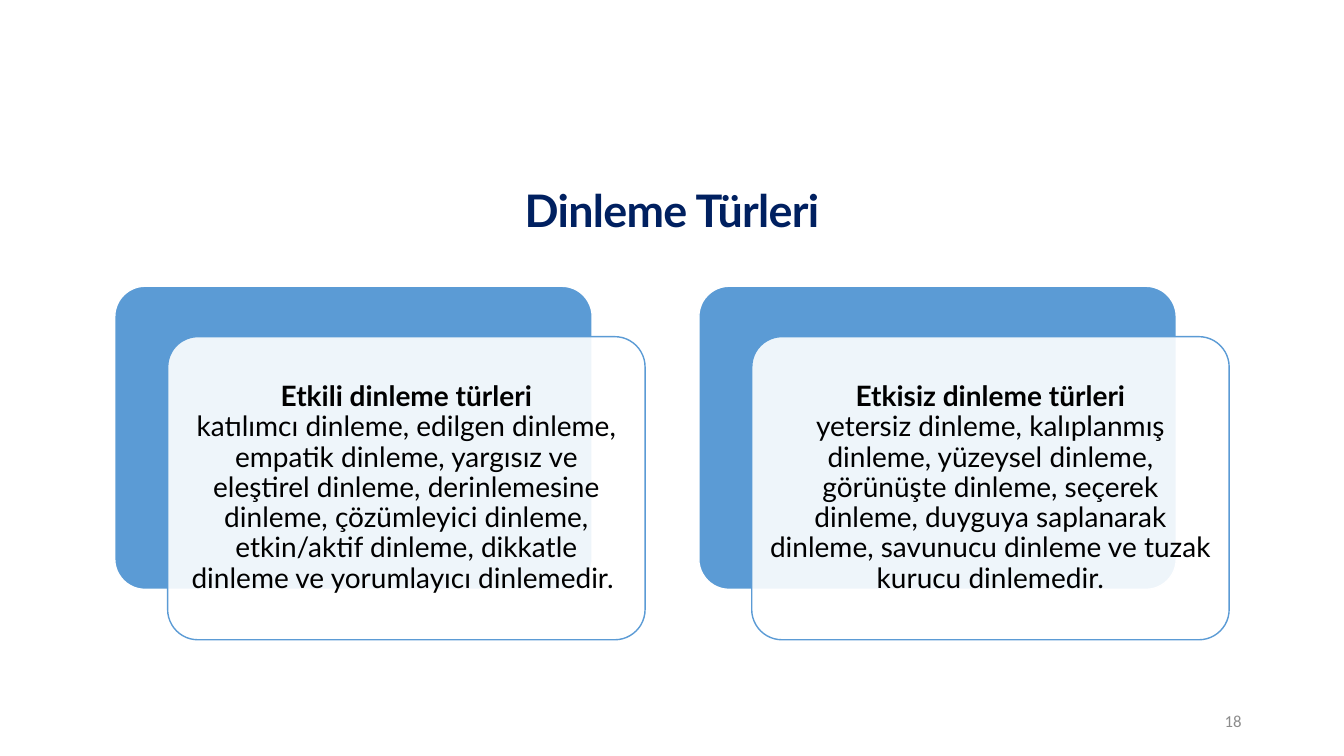
import pptx
import pptx.dml.color
import pptx.enum.shapes
import pptx.enum.text
import pptx.oxml.ns
import pptx.util
from lxml import etree

Pt = pptx.util.Pt
ALIGN = pptx.enum.text.PP_ALIGN
COLORS = {"navy": "002060", "blue": "5B9BD5", "white": "FFFFFF",
          "black": "000000", "gray": "8C8C8C"}
CARDS = [
    ("Etkili dinleme türleri",
     "katılımcı dinleme, edilgen dinleme, empatik dinleme, yargısız ve "
     "eleştirel dinleme, derinlemesine dinleme, çözümleyici dinleme, "
     "etkin/aktif dinleme, dikkatle dinleme ve yorumlayıcı dinlemedir. "),
    ("Etkisiz dinleme türleri",
     "yetersiz dinleme, kalıplanmış dinleme, yüzeysel dinleme, görünüşte "
     "dinleme, seçerek dinleme, duyguya saplanarak dinleme, savunucu dinleme "
     "ve tuzak kurucu dinlemedir."),
]


def rgb(name):
    """Return the named colour."""
    return pptx.dml.color.RGBColor.from_string(COLORS[name])


def add_paragraph_box(s, box, size, color, align=ALIGN.CENTER, font="Lato", inset=None):
    """Add a middle-anchored text box and return its styled paragraph."""
    tf = s.shapes.add_textbox(*map(Pt, box)).text_frame
    tf.word_wrap = True
    tf.vertical_anchor = pptx.enum.text.MSO_ANCHOR.MIDDLE
    if inset is not None:
        tf.margin_left = tf.margin_right = tf.margin_top = tf.margin_bottom = Pt(inset)
    p = tf.paragraphs[0]
    p.alignment = align
    p.font.size = Pt(size)
    p.font.name = font
    p.font.color.rgb = rgb(color)
    return p


def add_panel(s, box, fill, line, opacity=100):
    """Add a rounded panel with the given fill opacity in percent."""
    sp = s.shapes.add_shape(pptx.enum.shapes.MSO_SHAPE.ROUNDED_RECTANGLE, *map(Pt, box))
    sp.shadow.inherit = False
    sp.adjustments[0] = 0.1
    sp.fill.solid()
    sp.fill.fore_color.rgb = rgb(fill)
    sp.line.color.rgb = rgb(line)
    sp.line.width = Pt(1)
    if opacity < 100:
        qn = pptx.oxml.ns.qn
        color = sp._element.spPr.find(qn("a:solidFill")).find(qn("a:srgbClr"))
        etree.SubElement(color, qn("a:alpha")).set("val", str(opacity * 1000))


def add_title(s, box, text):
    """Add the slide title."""
    p = add_paragraph_box(s, box, 32, "navy")
    p.line_spacing = 0.9
    p.font.bold = True
    r = p.add_run()
    r.text = text
    r._r.get_or_add_rPr().set("spc", "-50")


def add_card(s, box, heading, body):
    """Add a blue panel with a translucent text panel offset over it."""
    x, y, w, h = box
    dx, dy, pad = 37.8, 36, 6.3
    add_panel(s, box, "blue", "white")
    add_panel(s, (x + dx, y + dy, w, h), "white", "blue", 90)
    text_box = (x + dx + pad, y + dy + pad, w - 2 * pad, h - 2 * pad)
    p = add_paragraph_box(s, text_box, 20, "black", inset=6)
    p.line_spacing = 0.9
    r = p.add_run()
    r.text = heading
    r.font.bold = True
    p.add_line_break()
    p.add_run().text = body


def add_page_number(s, box, number):
    """Add the page number."""
    p = add_paragraph_box(s, box, 12, "gray", ALIGN.RIGHT, "Calibri")
    p.add_run().text = str(number)


def main():
    """Build and save the slide."""
    prs = pptx.Presentation()
    prs.slide_width, prs.slide_height = Pt(960), Pt(540)
    s = prs.slides.add_slide(prs.slide_layouts[6])
    add_title(s, (66, 100, 828, 104.5), "Dinleme Türleri")
    for i, (heading, body) in enumerate(CARDS):
        add_card(s, (82 + i * 417.2, 204.5, 341, 216.5), heading, body)
    add_page_number(s, (678, 500.5, 216, 28.75), 18)
    prs.save("out.pptx")


if __name__ == "__main__":
    main()
